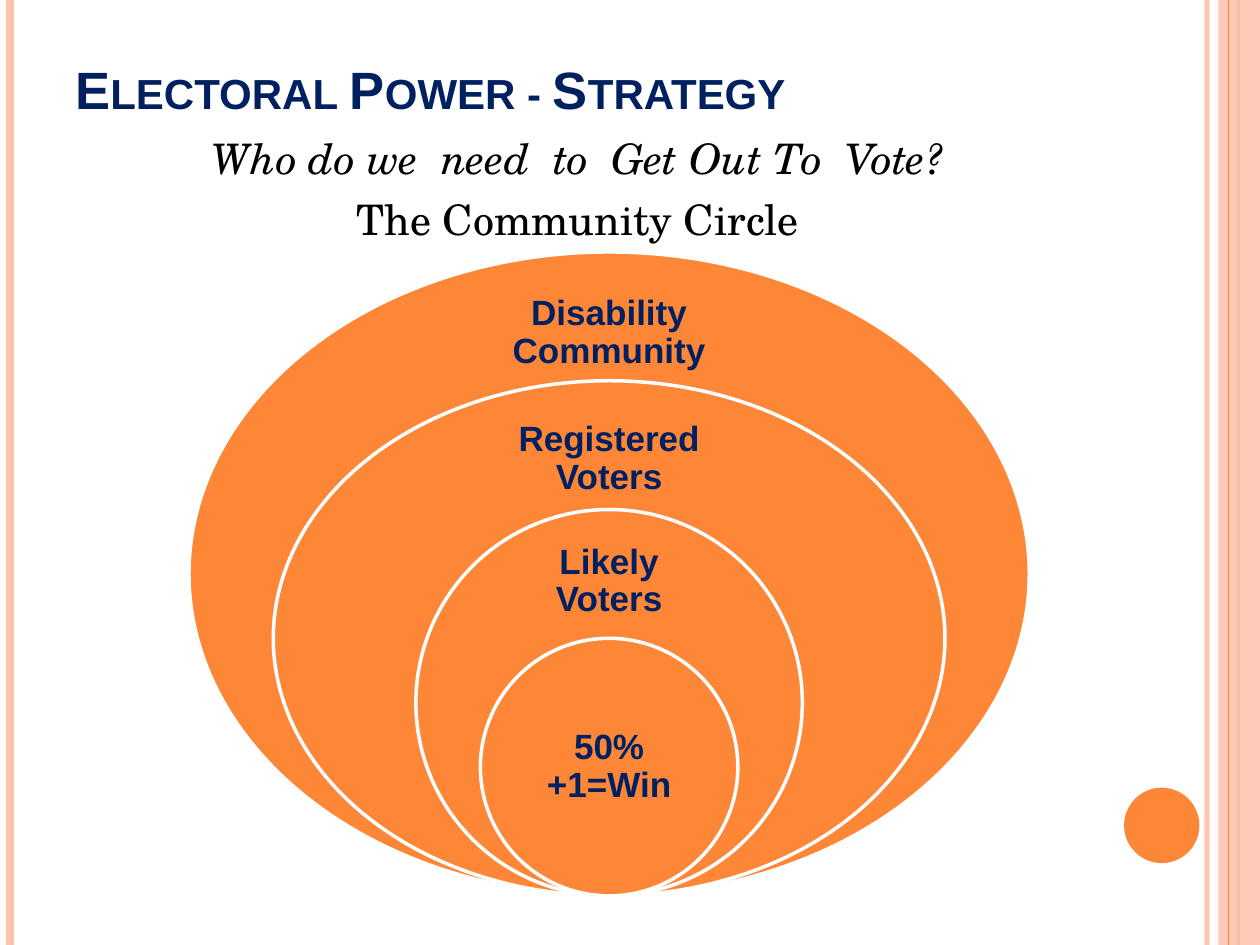
import pptx
import pptx.util
import pptx.dml.color
import pptx.enum.shapes
import pptx.enum.text
import pptx.oxml
import pptx.oxml.ns

Cm, Pt = pptx.util.Cm, pptx.util.Pt
RGBColor = pptx.dml.color.RGBColor
SHAPE = pptx.enum.shapes.MSO_SHAPE
ANCHOR = pptx.enum.text.MSO_ANCHOR
ALIGN = pptx.enum.text.PP_ALIGN

ORANGE = RGBColor(0xFE, 0x86, 0x37)
PEACH = RGBColor(0xFE, 0xC3, 0xAE)
NAVY = RGBColor(0x00, 0x20, 0x60)
BLACK = RGBColor(0, 0, 0)
WHITE = RGBColor(0xFF, 0xFF, 0xFF)

WIDTH, HEIGHT = 25.4, 19.05
CENTER_X, RINGS_BOTTOM, OUTER_HEIGHT = 12.28, 18.06, 12.98

# label, ring width, label top, label width, label height (cm)
RINGS = [
    ("Disability Community", 16.94, 5.74, 4.72, 1.96),
    ("Registered Voters", 13.54, 8.31, 4.72, 1.88),
    ("Likely Voters", 7.79, 10.85, 3.63, 1.75),
    ("50%+1=Win", 5.19, 14.17, 3.68, 2.59),
]


def set_alpha(element, percent):
    """Make the solid colour inside element partly transparent."""
    color = element.find(".//" + pptx.oxml.ns.qn("a:srgbClr"))
    alpha = color.makeelement(pptx.oxml.ns.qn("a:alpha"), {"val": str(percent * 1000)})
    color.append(alpha)


def add_vertical_line(shapes, x, color, weight, alpha=None):
    line = shapes.add_connector(
        pptx.enum.shapes.MSO_CONNECTOR.STRAIGHT, Cm(x), 0, Cm(x), Cm(HEIGHT))
    line.line.color.rgb = color
    line.line.width = Pt(weight)
    if alpha:
        set_alpha(line._element.spPr, alpha)
    line._element.spPr.append(pptx.oxml.parse_xml(
        "<a:effectLst %s/>" % pptx.oxml.ns.nsdecls("a")))


def add_filled(shapes, kind, x, y, w, h, color, outline=None):
    s = shapes.add_shape(kind, Cm(x), Cm(y), Cm(w), Cm(h))
    s.shadow.inherit = False
    s.fill.solid()
    s.fill.fore_color.rgb = color
    if outline:
        s.line.color.rgb = outline
        s.line.width = Pt(2)
    else:
        s.line.fill.background()
    return s


def add_text_frame(shapes, x, y, w, h, anchor, inset=None):
    tf = shapes.add_textbox(Cm(x), Cm(y), Cm(w), Cm(h)).text_frame
    tf.word_wrap = True
    tf.vertical_anchor = anchor
    if inset:
        tf.margin_left = tf.margin_right = Cm(inset)
        tf.margin_top = tf.margin_bottom = Cm(inset)
    return tf


def add_run(p, text, font, size, color, bold=False, italic=False):
    r = p.add_run()
    r.text = text
    r.font.name = font
    r.font.size = Pt(size)
    r.font.color.rgb = color
    r.font.bold = bold
    r.font.italic = italic
    return r


def add_side_decoration(shapes):
    add_vertical_line(shapes, 24.33, PEACH, 3, 93)
    add_vertical_line(shapes, 0.2, PEACH, 4.5)
    add_vertical_line(shapes, 24.97, ORANGE, 1.5)
    band = add_filled(shapes, SHAPE.RECTANGLE, 24.56, 0, 0.84, HEIGHT, PEACH)
    set_alpha(band._element.spPr, 87)
    add_vertical_line(shapes, 24.77, ORANGE, 0.75)
    add_filled(shapes, SHAPE.OVAL, 22.66, 15.88, 1.52, 1.52, ORANGE)


def add_heading(shapes):
    tf = add_text_frame(shapes, 1.27, 0.76, 20.75, 1.78, ANCHOR.BOTTOM)
    r = add_run(tf.paragraphs[0], "Electoral Power - Strategy", "Arial", 30, NAVY, bold=True)
    r.font._element.set("cap", "small")


def add_intro(shapes):
    tf = add_text_frame(shapes, 1.27, 2.54, 20.75, 15.44, ANCHOR.TOP)
    lines = [("Who do we  need  to  Get Out To  Vote?", True),
             ("The Community Circle", False)]
    for i, (text, italic) in enumerate(lines):
        p = tf.add_paragraph() if i else tf.paragraphs[0]
        p.alignment = ALIGN.CENTER
        p.space_before = Pt(6)
        pPr = p._p.get_or_add_pPr()
        pPr.set("marL", str(Cm(0.76)))
        pPr.set("indent", str(-Cm(0.76)))
        add_run(p, text, "TeX Gyre Schola", 24, BLACK, italic=italic)


def add_community_rings(shapes):
    """Nested ellipses sharing their lowest point, each a fifth shorter."""
    group = shapes.add_group_shape().shapes
    for i, (label, w, top, label_w, label_h) in enumerate(RINGS):
        h = OUTER_HEIGHT * (1 - 0.2 * i)
        add_filled(group, SHAPE.OVAL, CENTER_X - w / 2, RINGS_BOTTOM - h, w, h,
                   ORANGE, WHITE)
        tf = add_text_frame(group, CENTER_X - label_w / 2, top, label_w, label_h,
                            ANCHOR.MIDDLE, inset=0.4)
        p = tf.paragraphs[0]
        p.alignment = ALIGN.CENTER
        p.line_spacing = 0.9
        add_run(p, label, "Arial", 20, NAVY, bold=True)


def main():
    prs = pptx.Presentation()
    prs.slide_width, prs.slide_height = Cm(WIDTH), Cm(HEIGHT)
    shapes = prs.slides.add_slide(prs.slide_layouts[6]).shapes
    add_side_decoration(shapes)
    add_heading(shapes)
    add_intro(shapes)
    add_community_rings(shapes)
    prs.save("out.pptx")


if __name__ == "__main__":
    main()
